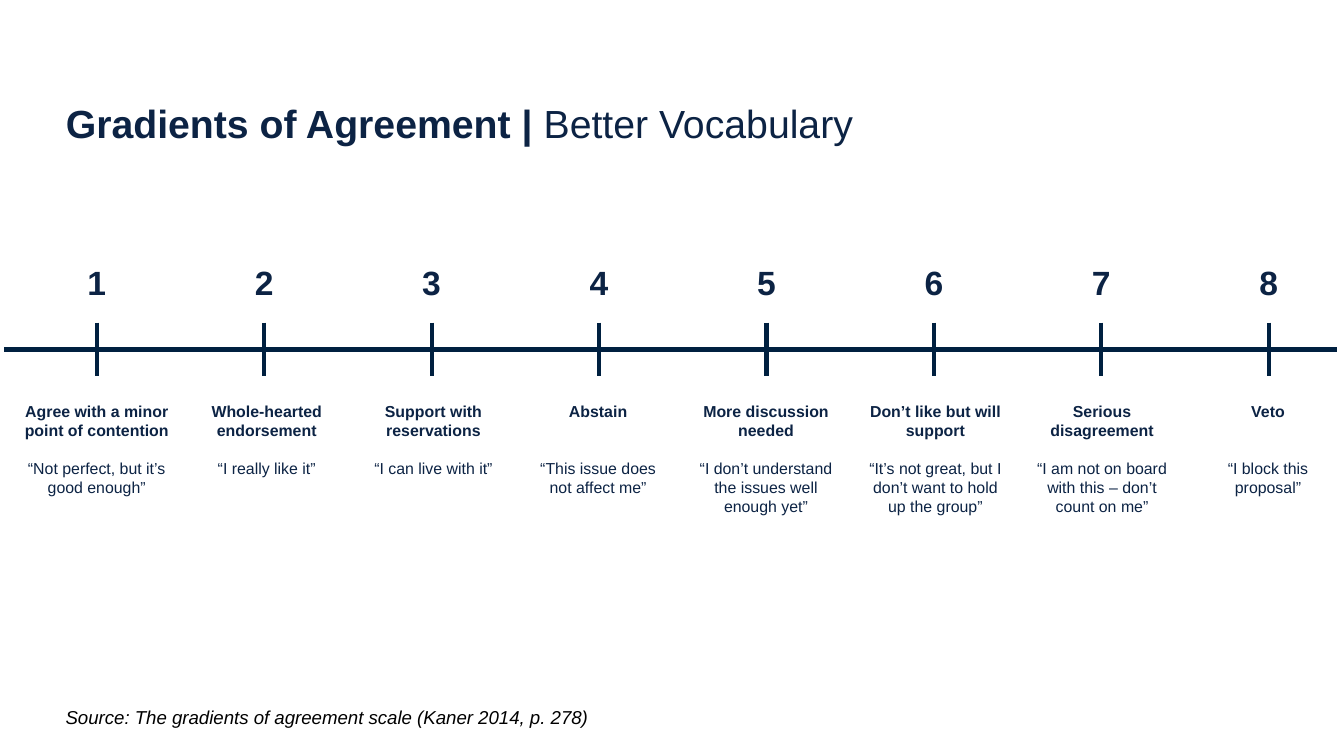
from lxml import etree
from pptx import Presentation
from pptx.dml.color import RGBColor
from pptx.enum.shapes import MSO_CONNECTOR
from pptx.enum.text import MSO_ANCHOR, MSO_AUTO_SIZE, PP_ALIGN
from pptx.oxml.ns import qn
from pptx.util import Inches, Pt

STRAIGHT = MSO_CONNECTOR.STRAIGHT
TOP, MIDDLE = MSO_ANCHOR.TOP, MSO_ANCHOR.MIDDLE
LEFT, CENTER = PP_ALIGN.LEFT, PP_ALIGN.CENTER
NO_FIT = MSO_AUTO_SIZE.NONE
COLORS = {"text": "0C2344", "axis": "002040", "source": "000000"}
FONT = "Arial"

FIRST_X, LAST_X = 0.72, 9.44
AXIS_Y = 2.6
LABEL_SIZE, LINE_PITCH = 8.5, 10.2  # points
QUOTE_LINE = 3  # lines from the top of a label down to its quote

# left, width, height, heading, heading lines, quote
LEVELS = [
    (0.17, 1.1, 0.72, "Agree with a minor point of contention", 2,
     "“Not perfect, but it’s good enough”"),
    (1.51, 0.95, 0.57, "Whole-hearted endorsement", 2, "“I really like it”"),
    (2.75, 0.95, 0.57, "Support with reservations", 2, "“I can live with it”"),
    (3.99, 0.92, 0.72, "Abstain", 1, "“This issue does not affect me”"),
    (5.15, 1.1, 0.86, "More discussion needed", 2,
     "“I don’t understand the issues well enough yet”"),
    (6.42, 1.08, 0.86, "Don’t like but will support", 2,
     "“It’s not great, but I don’t want to hold up the group”"),
    (7.66, 1.08, 0.86, "Serious disagreement", 2,
     "“I am not on board with this – don’t count on me”"),
    (9.05, 0.77, 0.72, "Veto", 1, "“I block this proposal”"),
]


class SlideBuilder:
    def __init__(self, prs):
        self.slide = prs.slides.add_slide(prs.slide_layouts[5])

    def frame(self, sp, inset, anchor=TOP):
        tf = sp.text_frame
        tf.word_wrap = True
        tf.auto_size = NO_FIT
        tf.vertical_anchor = anchor
        tf.margin_left = tf.margin_right = Inches(inset)
        tf.margin_top = tf.margin_bottom = Inches(inset)
        return tf

    def run(self, p, text, size, bold=False, italic=False, color="text"):
        r = p.add_run()
        r.text = text
        r.font.name = FONT
        r.font.size = Pt(size)
        r.font.bold = bold
        r.font.italic = italic
        r.font.color.rgb = RGBColor.from_string(COLORS[color])

    def title(self, x, y, w, h, strong, light):
        sp = self.slide.shapes.title
        sp.left, sp.top, sp.width, sp.height = map(Inches, (x, y, w, h))
        p = self.frame(sp, 0.1).paragraphs[0]
        p.alignment = LEFT
        self.run(p, strong, 21, bold=True)
        self.run(p, light, 21)

    def text_box(self, x, y, w, h, inset=0.1, anchor=TOP):
        sp = self.slide.shapes.add_textbox(*map(Inches, (x, y, w, h)))
        return self.frame(sp, inset, anchor)

    def number(self, x, text):
        p = self.text_box(x - 0.18, 1.88, 0.36, 0.44, anchor=MIDDLE).paragraphs[0]
        p.alignment = CENTER
        self.run(p, text, 18, bold=True)

    def label(self, x, w, h, heading, lines, quote):
        tf = self.text_box(x, 2.99, w, h, inset=0)
        p = tf.paragraphs[0]
        p.alignment = CENTER
        self.run(p, heading, LABEL_SIZE, bold=True)
        p = tf.add_paragraph()
        p.alignment = CENTER
        p.space_before = Pt(LINE_PITCH * (QUOTE_LINE - lines))
        self.run(p, quote, LABEL_SIZE)

    def line(self, x1, y1, x2, y2, width):
        cx = self.slide.shapes.add_connector(STRAIGHT, *map(Inches, (x1, y1, x2, y2)))
        cx.line.color.rgb = RGBColor.from_string(COLORS["axis"])
        cx.line.width = Pt(width)
        etree.SubElement(cx._element.spPr, qn("a:effectLst"))


def main():
    # 16:9 slide
    prs = Presentation()
    prs.slide_width = Inches(10)
    prs.slide_height = prs.slide_width * 9 // 16
    s = SlideBuilder(prs)

    # Title
    s.title(0.39, 0.64, 6.93, 0.56, "Gradients of Agreement | ", "Better Vocabulary")

    # Scale: axis, then number, tick and label for each level
    s.line(0.03, AXIS_Y, 9.95, AXIS_Y, 3)
    step = (LAST_X - FIRST_X) / (len(LEVELS) - 1)
    for i, level in enumerate(LEVELS):
        x = FIRST_X + i * step
        s.number(x, str(i + 1))
        s.line(x, AXIS_Y - 0.2, x, AXIS_Y + 0.2, 2.25)
        s.label(*level)

    # Source
    p = s.text_box(0.39, 5.15, 4.4, 0.37).paragraphs[0]
    s.run(p, "Source: The gradients of agreement scale (Kaner 2014, p. 278)",
          10, italic=True, color="source")

    prs.save("out.pptx")


if __name__ == "__main__":
    main()
